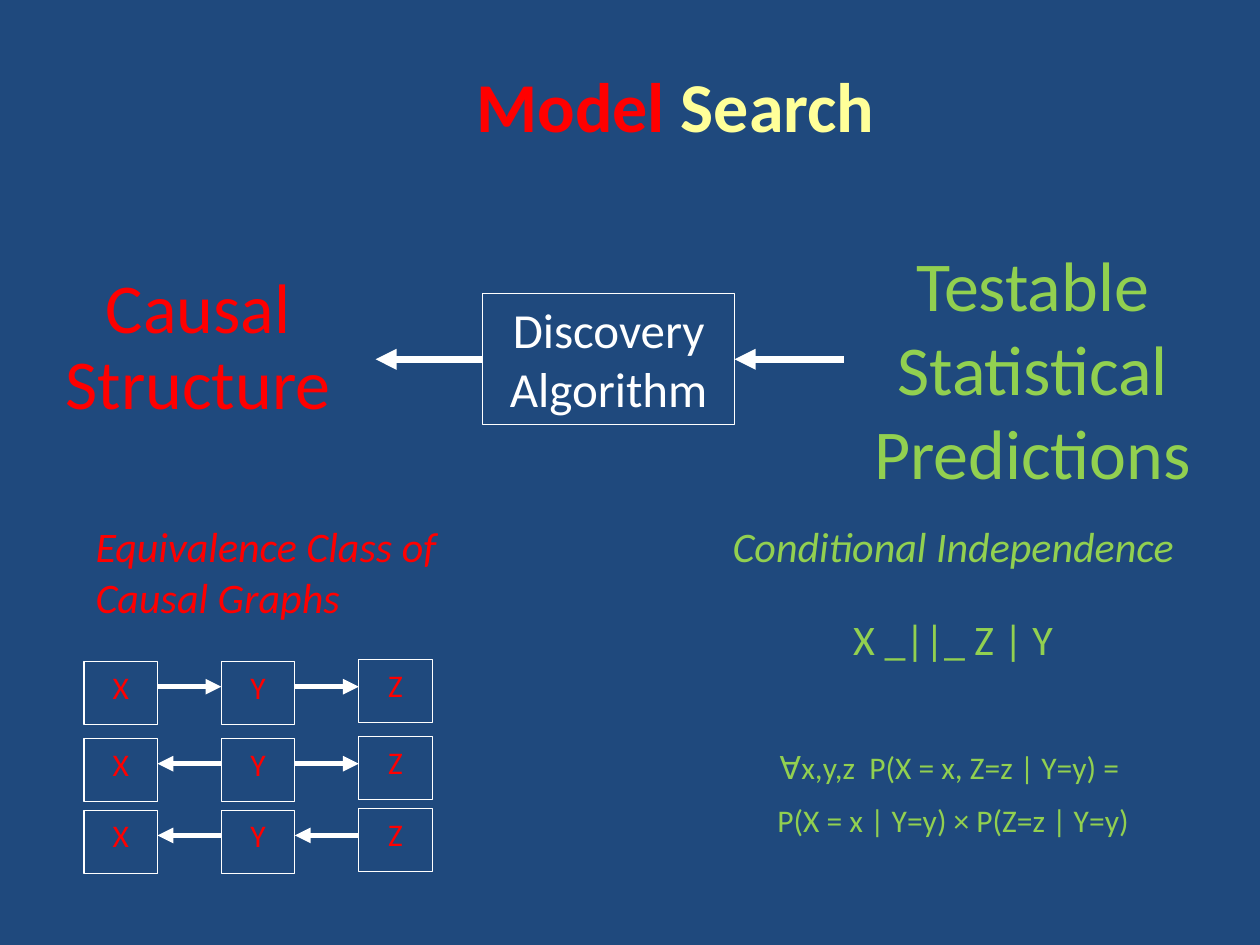
import pptx
import pptx.util
import pptx.dml.color
import pptx.enum.shapes
import pptx.enum.text
import lxml.etree

Pt = pptx.util.Pt
RED, GREEN, WHITE = "FF0000", "92D050", "FFFFFF"
ALIGN = pptx.enum.text.PP_ALIGN
ANCHOR = pptx.enum.text.MSO_ANCHOR
A = "{http://schemas.openxmlformats.org/drawingml/2006/main}"
rgb = pptx.dml.color.RGBColor.from_string

prs = pptx.Presentation()
prs.slide_width, prs.slide_height = Pt(720), Pt(540)
s = prs.slides.add_slide(prs.slide_layouts[6])
s.background.fill.solid()
s.background.fill.fore_color.rgb = rgb("1F497D")


def add_text(paragraphs, x, y, w, h, size=24, color=WHITE, bold=False,
             italic=False, align=ALIGN.CENTER, anchor=ANCHOR.TOP,
             spacing=None, boxed=False):
    """Each paragraph is a string or a list of (text, format overrides)."""
    if boxed:
        sp = s.shapes.add_shape(pptx.enum.shapes.MSO_SHAPE.RECTANGLE,
                                Pt(x), Pt(y), Pt(w), Pt(h))
        sp.shadow.inherit = False
        sp.fill.background()
        sp.line.color.rgb = rgb(WHITE)
        sp.line.width = Pt(0.75)
    else:
        sp = s.shapes.add_textbox(Pt(x), Pt(y), Pt(w), Pt(h))
    tf = sp.text_frame
    tf.word_wrap = True
    tf.vertical_anchor = anchor
    for i, runs in enumerate(paragraphs):
        p = tf.add_paragraph() if i else tf.paragraphs[0]
        p.alignment = align
        p.line_spacing = spacing
        for text, fmt in [(runs, {})] if isinstance(runs, str) else runs:
            r = p.add_run()
            r.text = text
            r.font.name = "Calibri"
            r.font.size = Pt(fmt.get("size", size))
            r.font.bold = bold
            r.font.italic = fmt.get("italic", italic)
            r.font.color.rgb = rgb(fmt.get("color", color))
            if "before" in fmt:
                p.space_before = Pt(fmt["before"])
    return sp


def add_arrow(x1, y1, x2, y2, width=3):
    c = s.shapes.add_connector(pptx.enum.shapes.MSO_CONNECTOR.STRAIGHT,
                               Pt(x1), Pt(y1), Pt(x2), Pt(y2))
    c.line.color.rgb = rgb(WHITE)
    c.line.width = Pt(width)
    lxml.etree.SubElement(c.line._get_or_add_ln(), A + "tailEnd", type="triangle")
    lxml.etree.SubElement(c._element.spPr, A + "effectLst")
    return c


# Title
add_text([[("Model ", {"color": RED}), ("Search", {"color": "FFFF99"})]],
         80, 28, 612, 63.4, size=40, bold=True, anchor=ANCHOR.MIDDLE)

# Predictions and their conditional independence example
add_text(["Testable Statistical Predictions"], 477.4, 134.6, 225.4, 152.6,
         size=40, color=GREEN)
add_text([[("Conditional Independence", {"italic": True})],
          [("X _||_ Z | Y", {"before": 24})],
          [("∀x,y,z  P(X = x, Z=z | Y=y) = ", {"size": 18, "before": 48})],
          [("P(X = x | Y=y) × P(Z=z | Y=y)", {"size": 18, "before": 9})]],
         347, 294, 395.3, 206, color=GREEN)

# Causal structure
add_text(["Causal ", "Structure "], 2.9, 152.6, 229.7, 100.8,
         size=40, color=RED, spacing=0.9)
add_text(["Equivalence Class of Causal Graphs"], 47.5, 294, 221.8, 65.5,
         color=RED, italic=True, align=ALIGN.LEFT)

# Equivalent graphs: row top and the direction of the two arrows
node_x, pitch, node_w, node_h = 48, 78.5, 42, 36
for top, directions in [(378, "→→"), (422, "←→"), (463, "←←")]:
    for i, name in enumerate("XYZ"):
        y = top - 1 if name == "Z" else top
        add_text([name], node_x + i * pitch, y, node_w, node_h,
                 size=18, color=RED, boxed=True)
    for i, direction in enumerate(directions):
        x1, x2 = node_x + i * pitch + node_w, node_x + (i + 1) * pitch
        if direction == "←":
            x1, x2 = x2, x1
        add_arrow(x1, top + 14.4, x2, top + 14.4)

# Discovery algorithm with its input and output arrows
algorithm = add_text(["Discovery Algorithm"], 275.8, 167.8, 144, 75,
                     size=28, boxed=True)
add_arrow(275.8, 205.3, 214.6, 205.3, width=4).begin_connect(algorithm, 1)
add_arrow(482.4, 205.3, 419.8, 205.3, width=4).end_connect(algorithm, 3)

prs.save("out.pptx")
